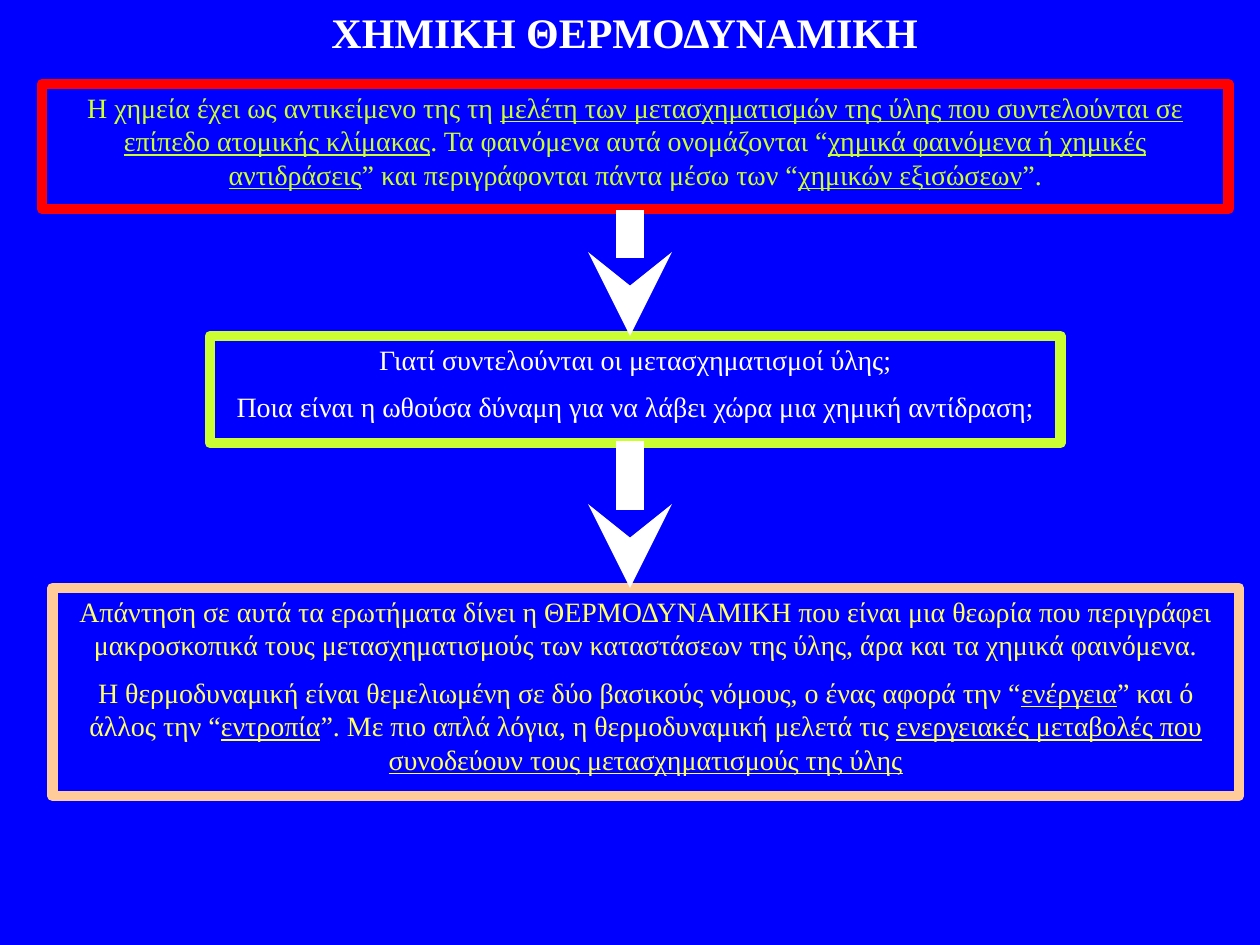
from dataclasses import dataclass

from lxml import etree
from pptx import Presentation
from pptx import util as u
from pptx.dml.color import RGBColor
from pptx.enum import shapes, text
from pptx.oxml.ns import qn


@dataclass(frozen=True)
class Theme:
    font: str = "Times New Roman"
    background: str = "0000FF"
    white: str = "FFFFFF"
    red: str = "FF0000"
    lime: str = "CCFF33"
    peach: str = "FFCC99"
    yellow: str = "FFFF66"
    title_size: int = 24
    body_size: int = 16
    border: int = 6
    arrow: int = 16


THEME = Theme()
UNIT = u.Inches(1) / 12  # the grid has 120 columns and 90 rows

TITLE = "ΧΗΜΙΚΗ ΘΕΡΜΟΔΥΝΑΜΙΚΗ"
TITLE_PLACE = (12, 0, 95, 6)

# Underscores enclose underlined words; places are column, row, width, height.
BOXES = [
    {"place": (4, 8, 113, 11.9), "border": THEME.red, "color": THEME.lime, "paragraphs": [
        "Η χημεία έχει ως αντικείμενο της τη _μελέτη των μετασχηματισμών της ύλης που "
        "συντελούνται σε επίπεδο ατομικής κλίμακας_. Τα φαινόμενα αυτά ονομάζονται “_χημικά "
        "φαινόμενα ή χημικές αντιδράσεις_” και περιγράφονται πάντα μέσω των “_χημικών "
        "εξισώσεων_”."]},
    {"place": (20, 32, 81, 10.2), "border": THEME.lime, "color": THEME.white, "paragraphs": [
        "Γιατί συντελούνται οι μετασχηματισμοί ύλης;",
        "Ποια είναι η ωθούσα δύναμη για να λάβει χώρα μια χημική αντίδραση;"]},
    {"place": (5, 56, 113, 19.8), "border": THEME.peach, "color": THEME.yellow, "paragraphs": [
        "Απάντηση σε αυτά τα ερωτήματα δίνει η ΘΕΡΜΟΔΥΝΑΜΙΚΗ που είναι μια θεωρία που "
        "περιγράφει μακροσκοπικά τους μετασχηματισμούς των καταστάσεων της ύλης, άρα και τα "
        "χημικά φαινόμενα.",
        "Η θερμοδυναμική είναι θεμελιωμένη σε δύο βασικούς νόμους, ο ένας αφορά την "
        "“_ενέργεια_” και ό άλλος την “_εντροπία_”. Με πιο απλά λόγια, η θερμοδυναμική μελετά "
        "τις _ενεργειακές μεταβολές που συνοδεύουν τους μετασχηματισμούς της ύλης_"]},
]
ARROW_COLUMN = 60
ARROW_ROWS = [(20, 32), (42, 56)]


def grid(*cells):
    return [round(cell * UNIT) for cell in cells]


def color(value):
    return RGBColor.from_string(value)


def write(shape, paragraphs, size, ink, bold=False):
    frame = shape.text_frame
    frame.word_wrap = True
    frame.auto_size = text.MSO_AUTO_SIZE.SHAPE_TO_FIT_TEXT
    frame.vertical_anchor = text.MSO_ANCHOR.TOP
    for index, content in enumerate(paragraphs):
        paragraph = frame.add_paragraph() if index else frame.paragraphs[0]
        paragraph.alignment = text.PP_ALIGN.CENTER
        if index:
            paragraph.space_before = u.Pt(size / 2)
        font = paragraph.font
        font.name, font.size, font.bold = THEME.font, u.Pt(size), bold
        font.color.rgb = color(ink)
        for part, words in enumerate(content.split("_")):
            if words:
                run = paragraph.add_run()
                run.text = words
                if part % 2:
                    run.font.underline = True


def add_box(slide, box):
    shape = slide.shapes.add_shape(shapes.MSO_SHAPE.RECTANGLE, *grid(*box["place"]))
    shape.shadow.inherit = False
    shape.fill.background()
    shape.line.color.rgb = color(box["border"])
    shape.line.width = u.Pt(THEME.border)
    write(shape, box["paragraphs"], THEME.body_size, box["color"])


def add_arrow(slide, top, bottom):
    arrow = slide.shapes.add_connector(
        shapes.MSO_CONNECTOR.STRAIGHT, *grid(ARROW_COLUMN, top, ARROW_COLUMN, bottom))
    arrow.line.color.rgb = color(THEME.white)
    arrow.line.width = u.Pt(THEME.arrow)
    etree.SubElement(arrow.line._get_or_add_ln(), qn("a:tailEnd"), type="stealth")
    etree.SubElement(arrow._element.spPr, qn("a:effectLst"))


def main():
    presentation = Presentation()
    presentation.slide_width, presentation.slide_height = grid(120, 90)
    slide = presentation.slides.add_slide(presentation.slide_layouts[6])
    slide.background.fill.solid()
    slide.background.fill.fore_color.rgb = color(THEME.background)

    title = slide.shapes.add_textbox(*grid(*TITLE_PLACE))
    write(title, [TITLE], THEME.title_size, THEME.white, bold=True)
    for box in BOXES:
        add_box(slide, box)
    for rows in ARROW_ROWS:
        add_arrow(slide, *rows)
    presentation.save("out.pptx")


if __name__ == "__main__":
    main()
